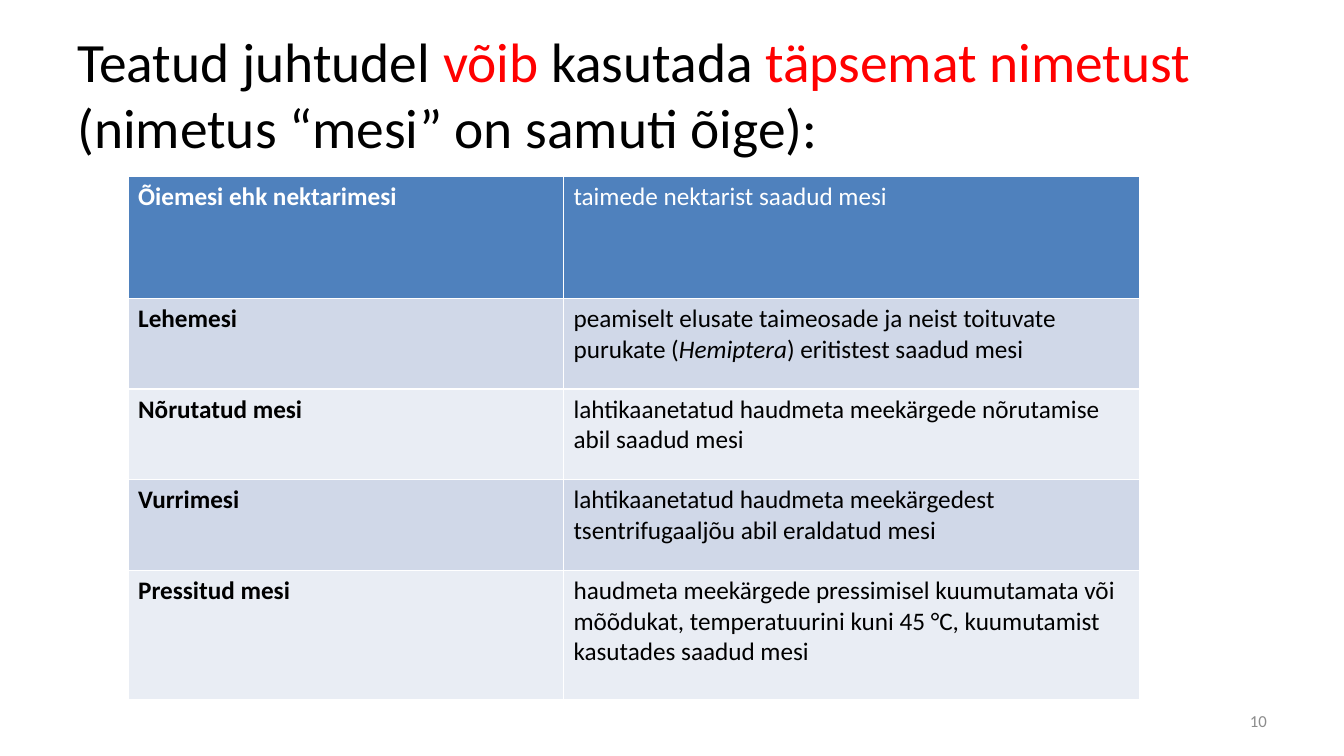
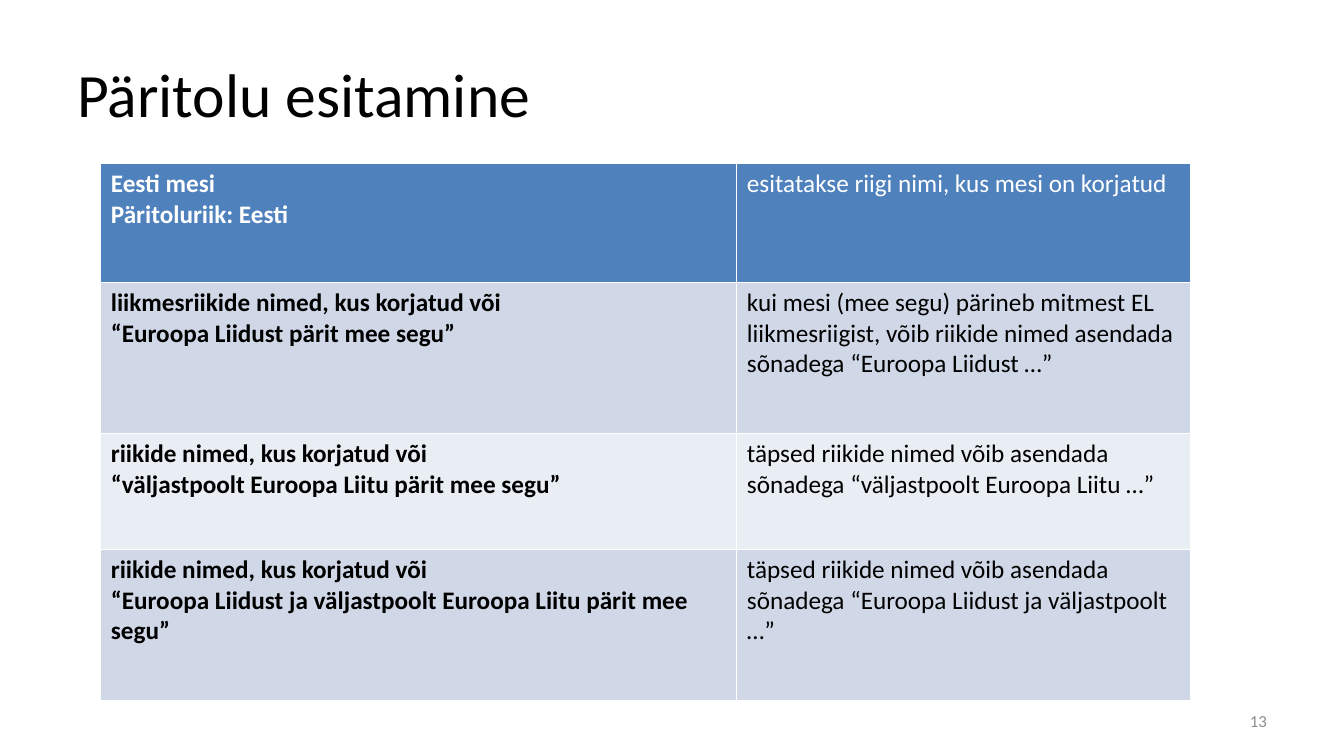
from dataclasses import dataclass

from pptx import Presentation
from pptx.dml.color import RGBColor
from pptx.enum.text import MSO_ANCHOR, MSO_AUTO_SIZE, PP_ALIGN
from pptx.util import Inches, Pt

LEFT, RIGHT = PP_ALIGN.LEFT, PP_ALIGN.RIGHT
MIDDLE = MSO_ANCHOR.MIDDLE
NO_AUTOFIT = MSO_AUTO_SIZE.NONE
SLIDE_W, SLIDE_H = Inches(13.333), Inches(7.5)
TITLE_ONLY = 5


@dataclass(frozen=True)
class Theme:
    font: str = "Calibri"
    ink: str = "000000"
    accent: str = "FF0000"
    header_ink: str = "FFFFFF"
    header_fill: str = "4F81BD"
    bands: tuple[str, str] = ("D0D8E8", "E9EDF4")
    number_ink: str = "8C8C8C"
    title_size: float = 44
    long_title_size: float = 39.6
    table_size: float = 18
    number_size: float = 12


@dataclass(frozen=True)
class Box:
    """A rectangle in percent of the slide's width and height."""
    left: float
    top: float
    width: float
    height: float

    def emu(self) -> tuple[int, int, int, int]:
        return (across(self.left), down(self.top),
                across(self.width), down(self.height))


@dataclass(frozen=True)
class Span:
    text: str
    accent: bool = False
    italic: bool = False


@dataclass(frozen=True)
class Entry:
    """A table row: lines of the term and the spans of its explanation."""
    term: tuple[str, ...]
    meaning: tuple[Span, ...]


@dataclass(frozen=True)
class TableSlide:
    title: tuple[Span, ...]
    title_size: float
    number: str
    left: float
    top: float
    columns: tuple[float, ...]
    rows: tuple[float, ...]
    entries: tuple[Entry, ...]


THEME = Theme()
TITLE_BOX = Box(5, 4, 90, 16.67)
NUMBER_BOX = Box(71.67, 92.67, 23.33, 5.33)

HONEY_TYPES = TableSlide(
    title=(Span("Teatud juhtudel "), Span("võib", accent=True),
           Span(" kasutada "), Span("täpsemat nimetust ", accent=True),
           Span("(nimetus “mesi” on samuti õige):")),
    title_size=THEME.long_title_size,
    number="10",
    left=9.53, top=23.33,
    columns=(32.4, 42.9),
    rows=(16.13, 12, 12, 12, 17.07),
    entries=(
        Entry(("Õiemesi ehk nektarimesi",),
              (Span("taimede nektarist saadud mesi"),)),
        Entry(("Lehemesi",),
              (Span("peamiselt elusate taimeosade ja neist toituvate purukate ("),
               Span("Hemiptera", italic=True),
               Span(") eritistest saadud mesi"))),
        Entry(("Nõrutatud mesi",),
              (Span("lahtikaanetatud haudmeta meekärgede nõrutamise abil "
                    "saadud mesi"),)),
        Entry(("Vurrimesi",),
              (Span("lahtikaanetatud haudmeta meekärgedest tsentrifugaaljõu "
                    "abil eraldatud mesi"),)),
        Entry(("Pressitud mesi",),
              (Span("haudmeta meekärgede pressimisel kuumutamata või mõõdukat, "
                    "temperatuurini kuni 45 °C, kuumutamist kasutades "
                    "saadud mesi"),)),
    ),
)

ORIGIN = TableSlide(
    title=(Span("Päritolu esitamine"),),
    title_size=THEME.title_size,
    number="13",
    left=7.5, top=21.6,
    columns=(47.33, 33.75),
    rows=(15.73, 20, 15.33, 20),
    entries=(
        Entry(("Eesti mesi", "Päritoluriik: Eesti"),
              (Span("esitatakse riigi nimi, kus mesi on korjatud"),)),
        Entry(("liikmesriikide nimed, kus korjatud või",
               "“Euroopa Liidust pärit mee segu”"),
              (Span("kui mesi (mee segu) pärineb mitmest EL liikmesriigist, "
                    "võib riikide nimed asendada sõnadega "
                    "“Euroopa Liidust …”"),)),
        Entry(("riikide nimed, kus korjatud või",
               "“väljastpoolt Euroopa Liitu pärit mee segu”"),
              (Span("täpsed riikide nimed võib asendada sõnadega "
                    "“väljastpoolt Euroopa Liitu …”"),)),
        Entry(("riikide nimed, kus korjatud või",
               "“Euroopa Liidust ja väljastpoolt Euroopa Liitu pärit mee segu”"),
              (Span("täpsed riikide nimed võib asendada sõnadega "
                    "“Euroopa Liidust ja väljastpoolt …”"),)),
    ),
)


def across(percent: float) -> int:
    return round(SLIDE_W * percent / 100)


def down(percent: float) -> int:
    return round(SLIDE_H * percent / 100)


def style_run(run, size: float, color: str, bold: bool = False,
              italic: bool = False) -> None:
    font = run.font
    font.name, font.size = THEME.font, Pt(size)
    font.bold, font.italic = bold, italic
    font.color.rgb = RGBColor.from_string(color)


def write_spans(paragraph, spans: tuple[Span, ...], size: float,
                color: str) -> None:
    for span in spans:
        run = paragraph.add_run()
        run.text = span.text
        style_run(run, size, THEME.accent if span.accent else color,
                  italic=span.italic)


def place(shape, box: Box) -> None:
    shape.left, shape.top, shape.width, shape.height = box.emu()


def add_title(slide, content: TableSlide) -> None:
    frame = slide.shapes.title.text_frame
    frame.vertical_anchor = MIDDLE
    frame.auto_size = NO_AUTOFIT
    heading = frame.paragraphs[0]
    heading.alignment = LEFT
    write_spans(heading, content.title, content.title_size, THEME.ink)


def add_table(slide, content: TableSlide) -> None:
    area = Box(content.left, content.top, sum(content.columns), sum(content.rows))
    table = slide.shapes.add_table(
        len(content.rows), len(content.columns), *area.emu()).table
    for column, width in zip(table.columns, content.columns):
        column.width = across(width)
    for row, height in zip(table.rows, content.rows):
        row.height = down(height)

    for index, entry in enumerate(content.entries):
        is_header = index == 0
        fill = THEME.header_fill if is_header else THEME.bands[(index - 1) % 2]
        ink = THEME.header_ink if is_header else THEME.ink
        term, meaning = table.cell(index, 0), table.cell(index, 1)
        for cell in (term, meaning):
            cell.fill.solid()
            cell.fill.fore_color.rgb = RGBColor.from_string(fill)
        term.text_frame.text = "\n".join(entry.term)
        for line in term.text_frame.paragraphs:
            style_run(line.runs[0], THEME.table_size, ink, bold=True)
        write_spans(meaning.text_frame.paragraphs[0], entry.meaning,
                    THEME.table_size, ink)


def add_number(slide, number: str) -> None:
    frame = slide.shapes.add_textbox(*NUMBER_BOX.emu()).text_frame
    frame.word_wrap = True
    frame.vertical_anchor = MIDDLE
    frame.text = number
    line = frame.paragraphs[0]
    line.alignment = RIGHT
    style_run(line.runs[0], THEME.number_size, THEME.number_ink)


def main() -> None:
    deck = Presentation()
    deck.slide_width, deck.slide_height = SLIDE_W, SLIDE_H

    # Shared title position
    layout = deck.slide_layouts[TITLE_ONLY]
    place(layout.placeholders[0], TITLE_BOX)

    # Slides
    for content in (HONEY_TYPES, ORIGIN):
        slide = deck.slides.add_slide(layout)
        add_title(slide, content)
        add_table(slide, content)
        add_number(slide, content.number)

    deck.save("out.pptx")


if __name__ == "__main__":
    main()
